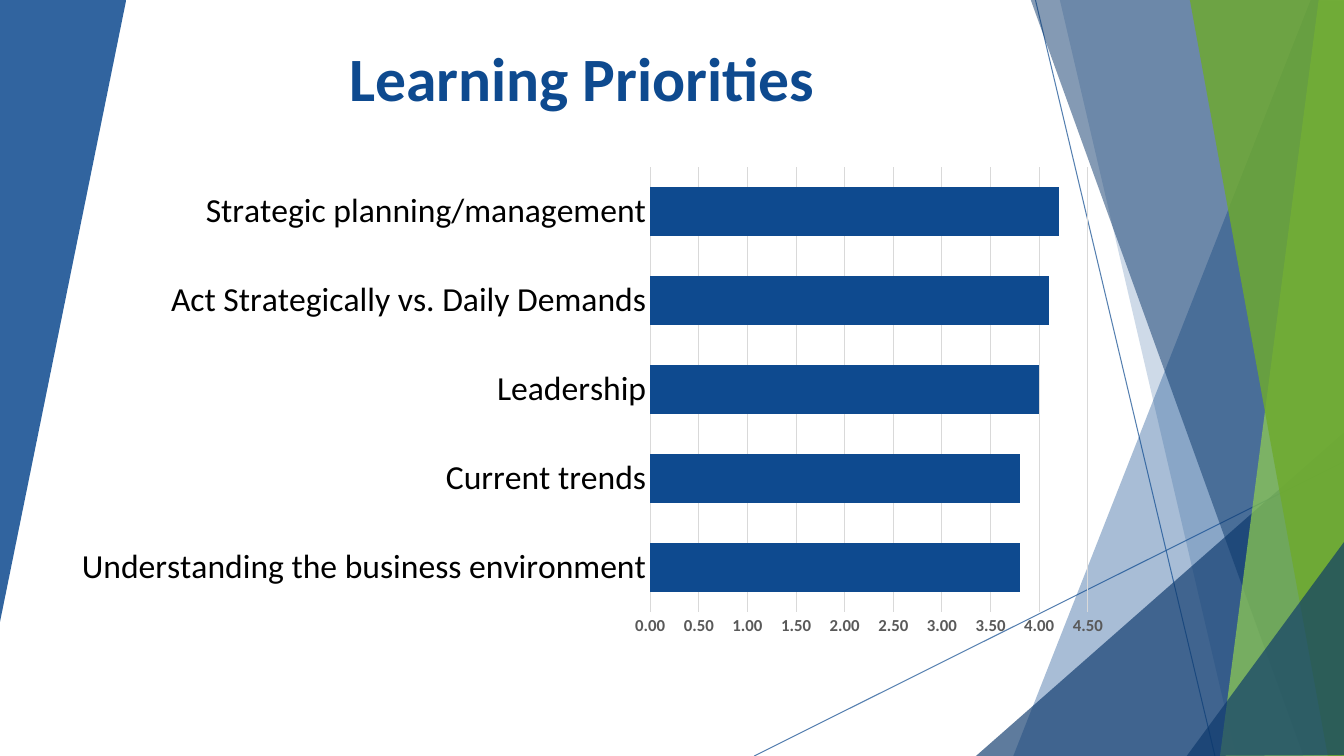
from lxml import etree
from pptx import Presentation
from pptx.chart.data import CategoryChartData
from pptx.dml.color import RGBColor
from pptx.enum.chart import XL_CHART_TYPE, XL_TICK_MARK
from pptx.enum.shapes import MSO_CONNECTOR
from pptx.enum.text import MSO_ANCHOR, PP_ALIGN
from pptx.oxml import parse_xml
from pptx.oxml.ns import nsdecls, qn
from pptx.util import Inches, Pt

BLUE = RGBColor(0x0E, 0x4A, 0x8F)
NAVY = RGBColor(0x0B, 0x37, 0x6B)
LIME = RGBColor(0x92, 0xD0, 0x50)
GREEN = RGBColor(0x6E, 0xAA, 0x2E)
GRID = RGBColor(0xD9, 0xD9, 0xD9)
GRAY = RGBColor(0x59, 0x59, 0x59)
BLACK = RGBColor(0, 0, 0)
FONT = "Calibri"

RAYS = [
    ((7.48, 7.5), (13.35, 4.57)),
    ((10.27, 0), (12.05, 7.5)),
]
FACETS = [
    (BLUE, 36, [(13, 0), (10.05, 7.5), (13.36, 7.51), (13.35, 0.01)]),
    (BLUE, 20, [(10.51, -0.01), (12.26, 7.5), (13.35, 7.5), (13.35, -0.01)]),
    (NAVY, 66, [(9.68, 7.5), (13.33, 4.29), (13.34, 7.5)]),
    (NAVY, 50, [(10.22, -0.01), (12.93, 7.5), (13.35, 7.49), (13.35, -0.01)]),
    (LIME, 70, [(13.08, -0.01), (12.1, 7.5), (13.35, 7.5), (13.34, -0.01)]),
    (GREEN, 82, [(11.8, -0.01), (13.17, 7.5), (13.36, 7.5), (13.34, -0.01)]),
    (NAVY, 66, [(11.77, 7.5), (13.35, 5.35), (13.36, 7.49)]),
    (BLUE, 85, [(-0.01, 0), (1.25, -0.01), (1.25, 0.01), (-0.01, 6.22)]),
]
PRIORITIES = [
    ("Understanding the business environment", 3.8),
    ("Current trends", 3.8),
    ("Leadership", 4),
    ("Act Strategically vs. Daily Demands", 4.1),
    ("Strategic planning/management", 4.2),
]


def set_alpha(sp, percent):
    color = next(sp._element.spPr.iter(qn("a:srgbClr")))
    etree.SubElement(color, qn("a:alpha")).set("val", str(percent * 1000))


def set_font(font, size, color, bold=False):
    font.name = FONT
    font.size = Pt(size)
    font.bold = bold
    font.color.rgb = color


def set_line(line, color, width=0.75):
    line.color.rgb = color
    line.width = Pt(width)


def add_text(slide, box, text, size=18, color=BLACK, bold=False,
             align=PP_ALIGN.LEFT, before=0):
    sp = slide.shapes.add_textbox(*map(Inches, box))
    tf = sp.text_frame
    tf.word_wrap = True
    tf.vertical_anchor = MSO_ANCHOR.TOP
    p = tf.paragraphs[0]
    p.alignment = align
    p.space_before = Pt(before)
    r = p.add_run()
    r.text = text
    set_font(r.font, size, color, bold)


def add_backdrop(slide, left, top):
    def place(x, y):
        return Inches(left + x), Inches(top + y)

    for start, end in RAYS:
        ray = slide.shapes.add_connector(
            MSO_CONNECTOR.STRAIGHT, *place(*start), *place(*end))
        set_line(ray.line, BLUE)
        set_alpha(ray, 70)
        etree.SubElement(ray._element.spPr, qn("a:effectLst"))
    for color, opacity, points in FACETS:
        corners = [place(x, y) for x, y in points]
        builder = slide.shapes.build_freeform(*corners[0])
        builder.add_line_segments(corners[1:], close=True)
        sp = builder.convert_to_shape()
        sp.shadow.inherit = False
        sp.fill.solid()
        sp.fill.fore_color.rgb = color
        set_alpha(sp, opacity)
        sp.line.fill.background()


def set_plot_area(chart, box, inset):
    width, height = box[2:]
    fractions = [part / whole for part, whole
                 in zip(inset, (width, height, width, height))]
    area = chart._chartSpace.chart.plotArea
    for old in area.findall(qn("c:layout")):
        area.remove(old)
    sizes = "".join(f'<c:{name} val="{value:.4f}"/>'
                    for name, value in zip("xywh", fractions))
    area.insert(0, parse_xml(
        f'<c:layout {nsdecls("c")}><c:manualLayout>'
        '<c:layoutTarget val="inner"/><c:xMode val="edge"/>'
        f'<c:yMode val="edge"/>{sizes}</c:manualLayout></c:layout>'))


def add_priorities_chart(slide, box):
    data = CategoryChartData(number_format="0.00")
    data.categories = [name for name, score in PRIORITIES]
    data.add_series("Series 1", [score for name, score in PRIORITIES])
    chart = slide.shapes.add_chart(
        XL_CHART_TYPE.BAR_CLUSTERED, *map(Inches, box), data).chart
    chart.has_legend = False
    chart.has_title = False
    set_font(chart.font, 10, BLACK)
    set_plot_area(chart, box, (5.85, 0.1, 4.34, 4.41))

    plot = chart.plots[0]
    plot.gap_width = 80
    plot.vary_by_categories = False
    bars = plot.series[0].format
    bars.fill.solid()
    bars.fill.fore_color.rgb = BLUE

    names, scores = chart.category_axis, chart.value_axis
    for axis in (names, scores):
        axis.major_tick_mark = XL_TICK_MARK.NONE
        axis.minor_tick_mark = XL_TICK_MARK.NONE
    set_font(names.tick_labels.font, 24, BLACK)
    set_line(names.format.line, GRID)

    scores.minimum_scale = 0
    scores.maximum_scale = 4.5
    scores.major_unit = 0.5
    scores.has_major_gridlines = True
    set_line(scores.major_gridlines.format.line, GRID)
    scores.format.line.fill.background()
    set_font(scores.tick_labels.font, 12, GRAY, bold=True)
    scores.tick_labels.number_format = "0.00"
    scores.tick_labels.number_format_is_linked = False


def main():
    prs = Presentation()
    prs.slide_width = Inches(13.33)
    prs.slide_height = Inches(7.5)
    slide = prs.slides.add_slide(prs.slide_layouts[6])
    add_backdrop(slide, 0, 0)
    add_text(slide, (1.19, 0.35, 9.17, 0.97), "Learning Priorities", size=44,
             color=BLUE, bold=True, align=PP_ALIGN.CENTER, before=10)
    add_priorities_chart(slide, (0.6, 1.56, 10.54, 4.84))
    prs.save("out.pptx")


if __name__ == "__main__":
    main()
